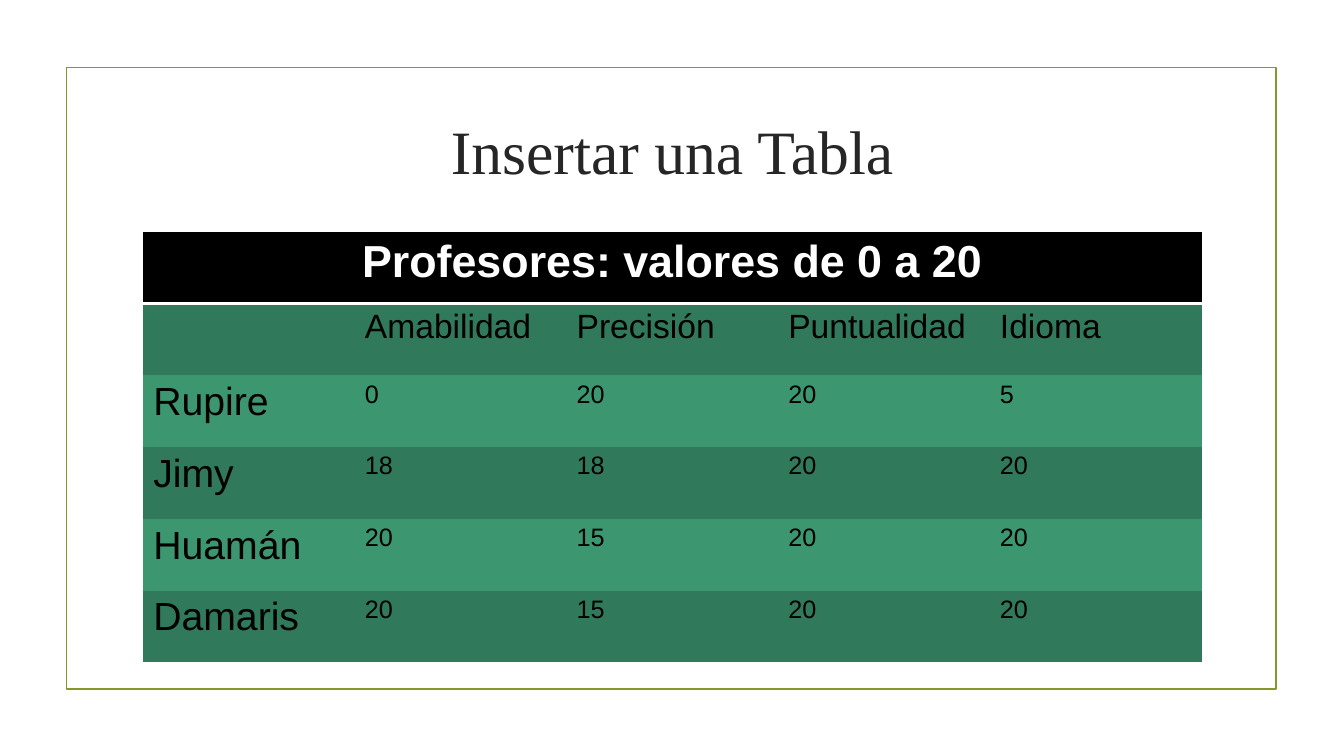
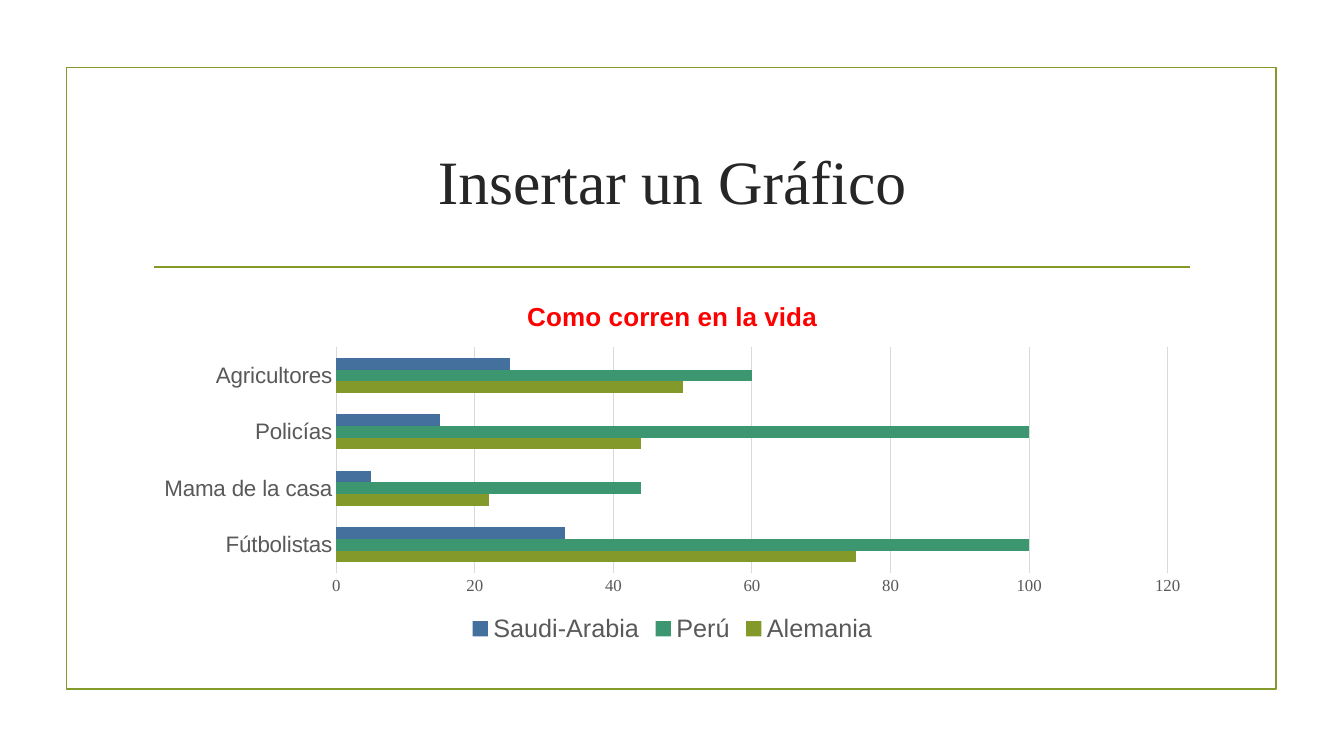
from pptx import Presentation
from pptx import util as u
from pptx.chart import data as chart_data
from pptx.dml.color import RGBColor
from pptx.enum import chart as charts, shapes, text
from pptx.oxml import ns, parse_xml

OLIVE = RGBColor(0x83, 0x99, 0x2A)
GREEN = RGBColor(0x3C, 0x97, 0x70)
DARK_GREEN = RGBColor(0x30, 0x79, 0x5A)
BLUE = RGBColor(0x44, 0x70, 0x9D)
RED = RGBColor(0xFF, 0x00, 0x00)
BLACK = RGBColor(0x00, 0x00, 0x00)
WHITE = RGBColor(0xFF, 0xFF, 0xFF)
INK = RGBColor(0x26, 0x26, 0x26)
GREY = RGBColor(0x59, 0x59, 0x59)
GRID = RGBColor(0xD9, 0xD9, 0xD9)
SANS = "Arial"
SERIF = "Times New Roman"
NO_STYLE = "{2D5ABB26-0587-4C30-8999-92F81FD0307C}"
LEFT = u.Cm(3.61)
WIDTH = u.Cm(26.67)


def write(box, words, size, color, name=SANS, bold=False, align=None):
    para = box.paragraphs[0]
    para.alignment = align
    span = para.add_run()
    span.text = words
    set_font(span.font, size, color, name, bold)


def set_font(font, size, color, name=SANS, bold=False):
    font.size = u.Pt(size)
    font.name = name
    font.bold = bold
    font.color.rgb = color


deck = Presentation()
deck.slide_width = u.Cm(33.87)
deck.slide_height = u.Cm(19.05)
layout = deck.slide_layouts[5]

pages = []
for words, height in (("Insertar una Tabla", 2.11), ("Insertar un Gráfico", 3.63)):
    page = deck.slides.add_slide(layout)
    title = page.shapes.title
    title.left, title.top, title.width, title.height = LEFT, u.Cm(2.72), WIDTH, u.Cm(height)
    title.text_frame.auto_size = text.MSO_AUTO_SIZE.NONE
    title.text_frame.vertical_anchor = text.MSO_ANCHOR.MIDDLE
    write(title.text_frame, words, 44, INK, name=SERIF, align=text.PP_ALIGN.CENTER)
    pages.append(page)
table_page, chart_page = pages

frame = table_page.shapes.add_shape(
    shapes.MSO_SHAPE.RECTANGLE, u.Cm(1.68), u.Cm(1.7), u.Cm(30.48), u.Cm(15.67))
frame.shadow.inherit = False
frame.fill.background()
rule = table_page.shapes.add_connector(
    shapes.MSO_CONNECTOR.STRAIGHT, u.Cm(3.89), u.Cm(6.73), u.Cm(30), u.Cm(6.73))
for number, part in enumerate((frame, rule)):
    part.line.color.rgb = OLIVE
    part.line.width = u.Pt(1.25)
    part.element.xpath(".//p:cNvPr")[0].set("id", str(101 + number))
    layout.shapes.element.insert(2 + number, part.element)
rule.element.xpath("p:spPr")[0].append(parse_xml(f"<a:effectLst {ns.nsdecls('a')}/>"))

rows = [
    ["Profesores: valores de 0 a 20"],
    ["", "Amabilidad", "Precisión", "Puntualidad", "Idioma"],
    ["Rupire", "0", "20", "20", "5"],
    ["Jimy", "18", "18", "20", "20"],
    ["Huamán", "20", "15", "20", "20"],
    ["Damaris", "20", "15", "20", "20"],
]
holder = table_page.shapes.add_table(len(rows), 5, LEFT, u.Cm(5.84), WIDTH, u.Cm(10.85))
for style in holder.element.iter(ns.qn("a:tableStyleId")):
    style.text = NO_STYLE
table = holder.table
table.first_row = table.horz_banding = False
for row_number, row in enumerate(rows):
    for column, words in enumerate(row):
        cell = table.cell(row_number, column)
        cell.fill.solid()
        cell.fill.fore_color.rgb = DARK_GREEN if row_number % 2 else GREEN
        if row_number == 0:
            cell.fill.fore_color.rgb = BLACK
            write(cell.text_frame, words, 32, WHITE, bold=True, align=text.PP_ALIGN.CENTER)
        elif words:
            size = 24 if row_number == 1 else 18 if column else 28
            write(cell.text_frame, words, size, BLACK)
table.cell(0, 0).merge(table.cell(0, 4))
for properties in holder.element.xpath(".//a:tr[1]/a:tc/a:tcPr"):
    properties.insert(0, parse_xml(
        f'<a:lnB {ns.nsdecls("a")} w="{u.Pt(2)}"><a:solidFill>'
        f'<a:srgbClr val="{WHITE}"/></a:solidFill></a:lnB>'))

series_list = [
    ("Alemania", (75, 22, 44, 50), OLIVE),
    ("Perú", (100, 44, 100, 60), GREEN),
    ("Saudi-Arabia", (33, 5, 15, 25), BLUE),
]
data = chart_data.CategoryChartData()
data.categories = ["Fútbolistas", "Mama de la casa", "Policías", "Agricultores"]
for name, values, color in series_list:
    data.add_series(name, values)
chart = chart_page.shapes.add_chart(
    charts.XL_CHART_TYPE.BAR_CLUSTERED, LEFT, u.Cm(7.11), WIDTH, u.Cm(9.22), data).chart
set_font(chart.font, 10, BLACK, name=SERIF)
chart.has_title = True
write(chart.chart_title.text_frame, "Como corren en la vida", 18.6, RED, bold=True)
chart.chart_title.include_in_layout = False

plot = chart.plots[0]
plot.gap_width = 182
plot.overlap = 0
plot.vary_by_categories = False
for series, (name, values, color) in zip(plot.series, series_list):
    series.format.fill.solid()
    series.format.fill.fore_color.rgb = color

categories, scale = chart.category_axis, chart.value_axis
set_font(categories.tick_labels.font, 16, GREY)
set_font(scale.tick_labels.font, 12, GREY, name=SERIF)
for axis in (categories, scale):
    axis.major_tick_mark = axis.minor_tick_mark = charts.XL_TICK_MARK.NONE
scale.minimum_scale = 0
scale.maximum_scale = 120
scale.major_unit = 20
scale.format.line.fill.background()
for line in (categories.format.line, scale.major_gridlines.format.line):
    line.color.rgb = GRID
    line.width = u.Pt(0.75)

chart.has_legend = True
chart.legend.position = charts.XL_LEGEND_POSITION.BOTTOM
chart.legend.include_in_layout = False
set_font(chart.legend.font, 18, GREY)

deck.save("out.pptx")
